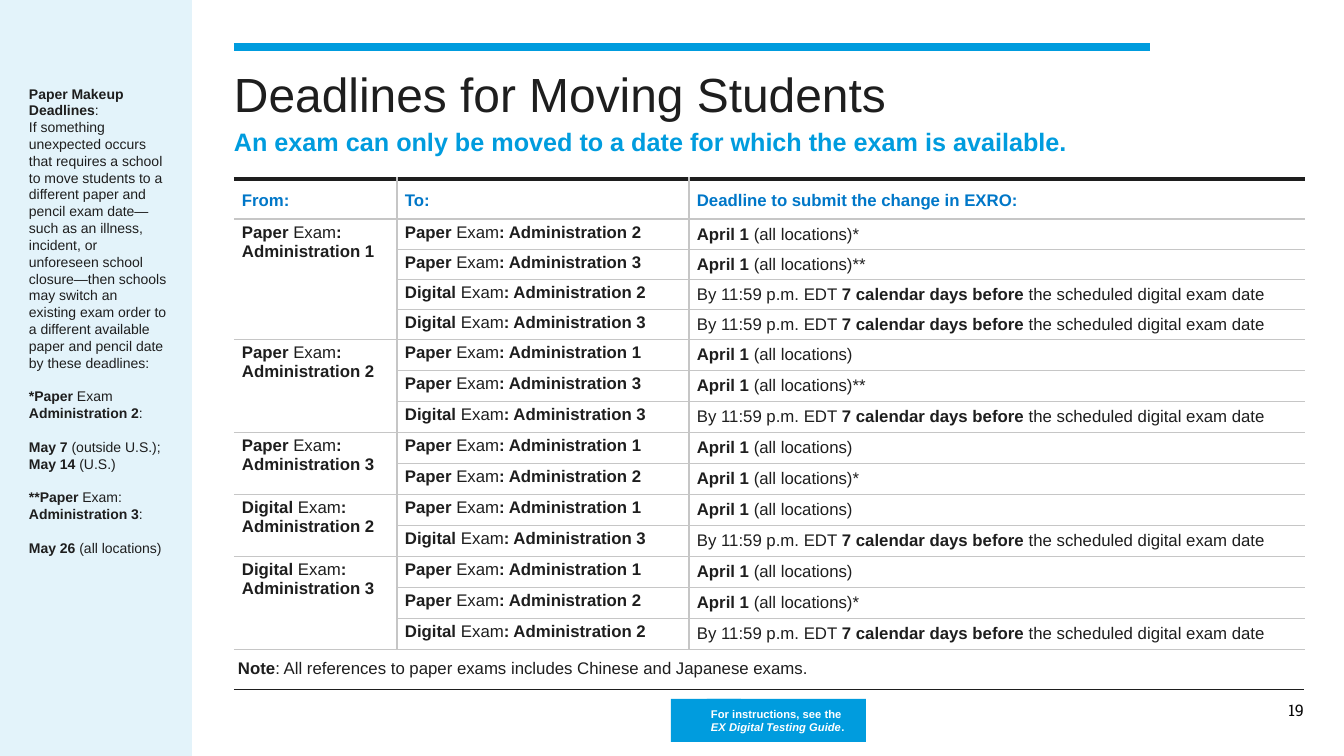
from dataclasses import dataclass

from lxml import etree
from pptx import Presentation
from pptx.dml.color import RGBColor
from pptx.enum.shapes import MSO_CONNECTOR, MSO_SHAPE
from pptx.enum.text import MSO_ANCHOR, PP_ALIGN
from pptx.oxml.ns import qn
from pptx.util import Emu, Pt

RECTANGLE, STRAIGHT = MSO_SHAPE.RECTANGLE, MSO_CONNECTOR.STRAIGHT
TOP, MIDDLE = MSO_ANCHOR.TOP, MSO_ANCHOR.MIDDLE
LEFT_ALIGN, RIGHT_ALIGN = PP_ALIGN.LEFT, PP_ALIGN.RIGHT
EMU_PER_PX = 914400 / 100.8
PLAIN_TABLE_STYLE = "{2D5ABB26-0587-4C30-8999-92F81FD0307C}"


@dataclass(frozen=True)
class Theme:
    ink: str = "1E1E1E"
    number_ink: str = "080808"
    accent: str = "009CDE"
    heading: str = "0077C8"
    pale: str = "E3F3FA"
    grid: str = "C6C6C6"
    white: str = "FFFFFF"
    font: str = "Arial"
    number_font: str = "Roboto Slab"
    title: float = 34.2
    subtitle: float = 18
    body: float = 12
    number: float = 11.4
    side: float = 10
    button: float = 8


def px(value):
    return Emu(round(value * EMU_PER_PX))


def rgb(color):
    return RGBColor.from_string(color)


class SlideBuilder:
    def __init__(self, slide, theme):
        self.slide = slide
        self.theme = theme

    def fill_text(self, frame, paragraphs, size, color=None, font=None, align=LEFT_ALIGN,
                  insets=(4, 4, 4, 4), anchor=TOP, wrap=True, gaps=(), line=None, after=None):
        """Each paragraph is a list of (text, flags) runs; flags hold b and i."""
        frame.word_wrap = wrap
        frame.vertical_anchor = anchor
        (frame.margin_left, frame.margin_top,
         frame.margin_right, frame.margin_bottom) = map(px, insets)
        for index, runs in enumerate(paragraphs):
            paragraph = frame.add_paragraph() if index else frame.paragraphs[0]
            paragraph.alignment = align
            if index in gaps:
                paragraph.space_before = Pt(12)
            if line:
                paragraph.line_spacing = line
            if after:
                paragraph.space_after = Pt(after)
            paragraph.font.size = Pt(size)
            paragraph.font.name = font or self.theme.font
            paragraph.font.color.rgb = rgb(color or self.theme.ink)
            bolds = {"b" in flags for _, flags in runs}
            if len(bolds) == 1:
                paragraph.font.bold = bolds.pop()
            for text, flags in runs:
                if text == "\n":
                    paragraph.add_line_break()
                    continue
                run = paragraph.add_run()
                run.text = text
                if bolds:
                    run.font.bold = "b" in flags
                if "i" in flags:
                    run.font.italic = True

    def text(self, box, paragraphs, size, **style):
        shape = self.slide.shapes.add_textbox(*map(px, box))
        self.fill_text(shape.text_frame, paragraphs, size, **style)

    def rectangle(self, box, color):
        shape = self.slide.shapes.add_shape(RECTANGLE, *map(px, box))
        shape.shadow.inherit = False
        shape.fill.solid()
        shape.fill.fore_color.rgb = rgb(color)
        shape.line.fill.background()
        return shape

    def rule(self, left, right, y, color, width):
        connector = self.slide.shapes.add_connector(STRAIGHT, *map(px, (left, y, right, y)))
        connector.line.color.rgb = rgb(color)
        connector.line.width = Pt(width)
        etree.SubElement(connector._element.spPr, qn("a:effectLst"))

    def table(self, left, top, widths, heights):
        frame = self.slide.shapes.add_table(
            len(heights), len(widths), *map(px, (left, top, sum(widths), sum(heights))))
        table = frame.table
        table.first_row = table.horz_banding = False
        table._tbl.tblPr.find(qn("a:tableStyleId")).text = PLAIN_TABLE_STYLE
        for column, width in zip(table.columns, widths):
            column.width = px(width)
        for row, height in zip(table.rows, heights):
            row.height = px(height)
        for row in range(len(heights)):
            for column in range(len(widths)):
                self.borders(table.cell(row, column), row == 0, column == 0,
                             column == len(widths) - 1)
        return table

    def borders(self, cell, is_header, is_first, is_last):
        properties = cell._tc.get_or_add_tcPr()
        grid = (self.theme.grid, 1)
        sides = {"lnL": None if is_first else grid, "lnR": None if is_last else grid,
                 "lnT": (self.theme.ink, 3) if is_header else grid, "lnB": grid}
        for side, style in sides.items():
            if style:
                color, width = style
                border = etree.SubElement(properties, qn(f"a:{side}"), w=str(int(Pt(width))))
                fill = etree.SubElement(border, qn("a:solidFill"))
                etree.SubElement(fill, qn("a:srgbClr"), val=color)
        cell.fill.background()

    def cell(self, cell, paragraphs, **style):
        self.fill_text(cell.text_frame, paragraphs, self.theme.body, **style)
        cell.margin_left = cell.margin_right = px(8)
        cell.margin_top = cell.margin_bottom = px(4)
        cell.vertical_anchor = style.get("anchor", TOP)


# Allowed moves: starting exam, then the exams it can move to
MOVES = [
    (("Paper", 1), [("Paper", 2), ("Paper", 3), ("Digital", 2), ("Digital", 3)]),
    (("Paper", 2), [("Paper", 1), ("Paper", 3), ("Digital", 3)]),
    (("Paper", 3), [("Paper", 1), ("Paper", 2)]),
    (("Digital", 2), [("Paper", 1), ("Digital", 3)]),
    (("Digital", 3), [("Paper", 1), ("Paper", 2), ("Digital", 2)]),
]
HEADERS = ["From:", "To:", "Deadline to submit the change in EXRO:"]
SIDE_NOTES = [
    [("Paper Makeup Deadlines", "b"), (":", "")],
    [("If something unexpected occurs that requires a school to move students to a "
      "different paper and pencil exam date—such as an illness, incident, or unforeseen "
      "school closure—then schools may switch an existing exam order to a different "
      "available paper and pencil date by these deadlines:", "")],
    [("*Paper", "b"), (" Exam ", ""), ("Administration 2", "b"), (":", "")],
    [("May 7", "b"), (" (outside U.S.); ", ""), ("May 14", "b"), (" (U.S.)", "")],
    [("**Paper", "b"), (" Exam:", "")],
    [("Administration 3", "b"), (":", "")],
    [("May 26", "b"), (" (all locations)", "")],
]


def exam(kind):
    return [(f"{kind} ", "b"), ("Exam", "")]


def deadline(kind, number):
    if kind == "Digital":
        return [("By 11:59 p.m. EDT ", ""), ("7 calendar days before", "b"),
                (" the scheduled digital exam date", "")]
    return [("April 1", "b"), (" (all locations)" + "*" * (number - 1), "")]


def main():
    presentation = Presentation()
    presentation.slide_width, presentation.slide_height = px(1344), px(756)
    theme = Theme()
    builder = SlideBuilder(presentation.slides.add_slide(presentation.slide_layouts[6]), theme)

    # Page frame
    builder.text((1253, 702, 51, 16), [[("19", "")]], theme.number, color=theme.number_ink,
                 font=theme.number_font, align=RIGHT_ALIGN, insets=(0, 0, 0, 0),
                 anchor=MIDDLE, wrap=False)
    builder.rule(234, 1304, 689, theme.ink, 0.25)
    builder.rectangle((0, 0, 192, 756), theme.pale)
    builder.rule(234, 1150, 47, theme.accent, 5.25)

    # Headings
    builder.text((234, 119, 916, 58),
                 [[("An exam can only be moved to a date for which the exam is available.", "b")]],
                 theme.subtitle, color=theme.accent, insets=(0, 7, 0, 5))
    builder.text((234, 59, 916, 45), [[("Deadlines for Moving Students", "")]],
                 theme.title, insets=(0, 6, 8, 0))

    # Deadline table: the first group has tighter rows
    first_rows = len(MOVES[0][1])
    other_rows = sum(len(targets) for _, targets in MOVES[1:])
    table = builder.table(234, 179, [163, 292, 616],
                          [40] + [29] * first_rows + [31] * other_rows)
    for column, header in enumerate(HEADERS):
        builder.cell(table.cell(0, column), [[(header, "b")]], color=theme.heading,
                     anchor=MIDDLE, line=1.2, after=6)
    row = 1
    for (kind, number), targets in MOVES:
        origin = table.cell(row, 0)
        origin.merge(table.cell(row + len(targets) - 1, 0))
        builder.cell(origin, [exam(kind) + [(":", "b")], [(f"Administration {number}", "b")]])
        for target_kind, target_number in targets:
            builder.cell(table.cell(row, 1), [
                exam(target_kind) + [(f": Administration {target_number}", "b")]])
            builder.cell(table.cell(row, 2), [deadline(target_kind, target_number)],
                         line=1.1, after=3)
            row += 1

    # Guide button
    builder.rectangle((671, 699, 70, 43), theme.accent)
    button = builder.rectangle((707, 699, 159, 43), theme.accent)
    builder.fill_text(button.text_frame, [[("For instructions, see the", "b"), ("\n", "b"),
                                           ("EX Digital Testing Guide", "bi"), (".", "b")]],
                      theme.button, color=theme.white, anchor=MIDDLE)

    # Side notes and table note
    builder.text((25, 81, 147, 473), SIDE_NOTES, theme.side, gaps=(2, 3, 4, 6))
    builder.text((234, 654, 1029, 28), [
        [("Note", "b"),
         (": All references to paper exams includes Chinese and Japanese exams.", "")]],
        theme.body)

    presentation.save("out.pptx")


if __name__ == "__main__":
    main()
